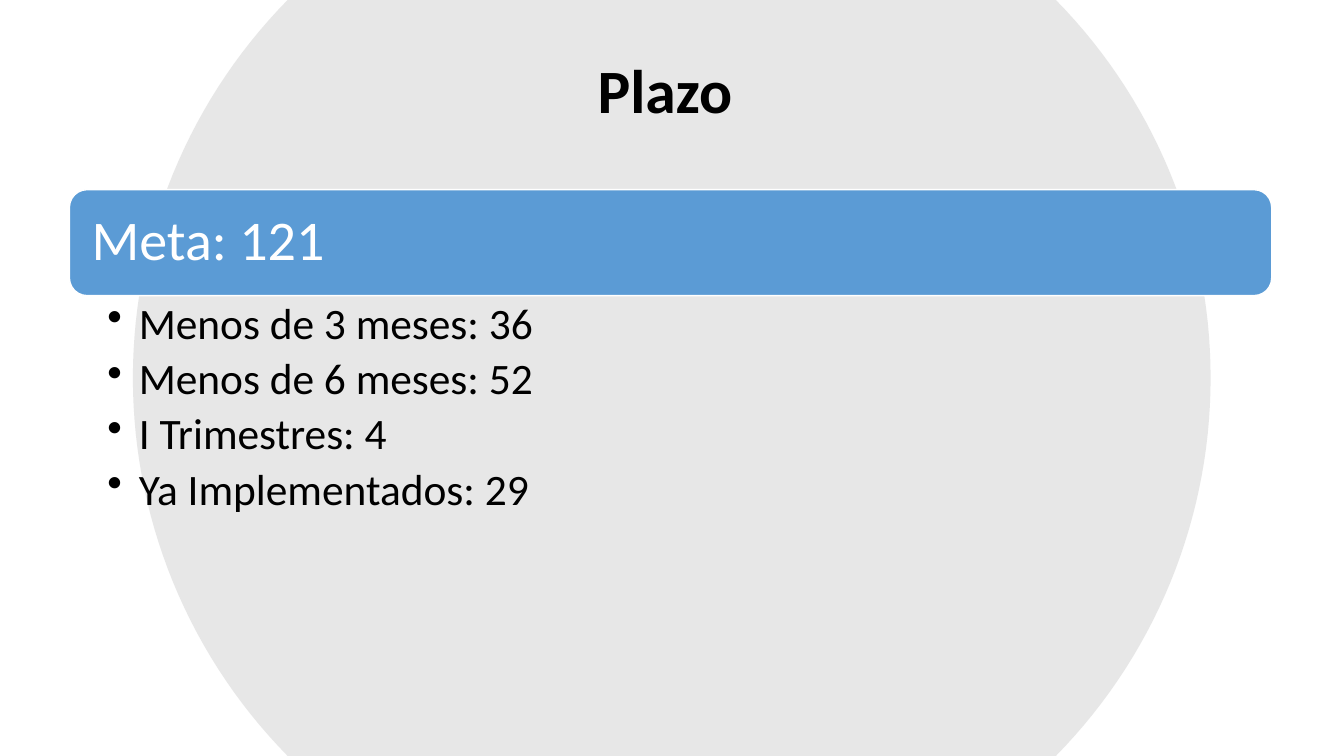
import dataclasses
import math

import pptx
import pptx.dml.color
import pptx.enum.shapes
import pptx.enum.text
import pptx.oxml
import pptx.oxml.ns
import pptx.util

Cm = pptx.util.Cm
Pt = pptx.util.Pt
Color = pptx.dml.color.RGBColor.from_string
Align = pptx.enum.text.PP_ALIGN
Anchor = pptx.enum.text.MSO_ANCHOR


@dataclasses.dataclass(frozen=True)
class Theme:
    font: str = "Calibri"
    ink: str = "000000"
    white: str = "FFFFFF"
    circle: str = "D9D9D9"
    bar: str = "5B9BD5"
    title_size: int = 44
    goal_size: int = 40
    item_size: int = 31


theme = Theme()


def write(shape, lines, size, color=theme.ink, bold=False, align=Align.LEFT,
          anchor=Anchor.TOP, insets=(0.25, 0.13, 0.25, 0.13), after=0, bullet_indent=0):
    """Fill a shape with paragraphs; insets run left, top, right, bottom in cm."""
    frame = shape.text_frame
    frame.word_wrap = True
    frame.vertical_anchor = anchor
    (frame.margin_left, frame.margin_top,
     frame.margin_right, frame.margin_bottom) = map(Cm, insets)
    for index, line in enumerate(lines):
        para = frame.add_paragraph() if index else frame.paragraphs[0]
        para.alignment = align
        para.line_spacing = 0.9
        para.space_after = Pt(after)
        if bullet_indent:
            properties = para._p.get_or_add_pPr()
            properties.set("marL", str(Cm(bullet_indent)))
            properties.set("indent", str(-Cm(bullet_indent)))
            properties.append(pptx.oxml.parse_xml(
                f'<a:buChar {pptx.oxml.ns.nsdecls("a")} char="•"/>'))
        span = para.add_run()
        span.text = line
        span.font.name = theme.font
        span.font.size = Pt(size)
        span.font.bold = bold
        span.font.color.rgb = Color(color)


deck = pptx.Presentation()
deck.slide_width, deck.slide_height = Cm(33.87), Cm(19.05)
page = deck.slides.add_slide(deck.slide_layouts[6])

# Background circle, cut off at the top and bottom of the page
center_x, center_y, radius = 16.93, 9.525, 13.58
steps = 60
half_angle = math.asin(center_y / radius)
points = []
for middle in (0, math.pi):
    for step in range(steps + 1):
        angle = middle + half_angle * (2 * step / steps - 1)
        points.append((Cm(center_x + radius * math.cos(angle)),
                       Cm(center_y + radius * math.sin(angle))))
builder = page.shapes.build_freeform(*points[0])
builder.add_line_segments(points[1:], close=True)
circle = builder.convert_to_shape()
circle.shadow.inherit = False
circle.fill.solid()
circle.fill.fore_color.rgb = Color(theme.circle)
circle.line.fill.background()
fill_color = circle._element.spPr.find(".//" + pptx.oxml.ns.qn("a:srgbClr"))
fill_color.append(pptx.oxml.parse_xml(
    f'<a:alpha {pptx.oxml.ns.nsdecls("a")} val="62000"/>'))

# Title
title = page.shapes.add_textbox(Cm(2.33), Cm(1.01), Cm(29.21), Cm(2.7))
write(title, ["Plazo "], theme.title_size, bold=True,
      align=Align.CENTER, anchor=Anchor.MIDDLE)

# Goal bar
left, top, width, height = Cm(1.75), Cm(4.78), Cm(30.3), Cm(2.67)
bar = page.shapes.add_shape(
    pptx.enum.shapes.MSO_SHAPE.ROUNDED_RECTANGLE, left, top, width, height)
bar.shadow.inherit = False
bar.fill.solid()
bar.fill.fore_color.rgb = Color(theme.bar)
bar.line.color.rgb = Color(theme.white)
bar.line.width = Pt(1)
write(bar, ["Meta: 121"], theme.goal_size, color=theme.white,
      anchor=Anchor.MIDDLE, insets=(0.43, 0.43, 0.43, 0.43))

# Deadlines
deadlines = page.shapes.add_textbox(left, top + height, width, Cm(5.97))
write(deadlines,
      ["Menos de 3 meses: 36", "Menos de 6 meses: 52",
       "I Trimestres: 4", "Ya Implementados: 29"],
      theme.item_size, insets=(0.96, 0.15, 0.79, 0.15), after=6, bullet_indent=0.79)

deck.save("out.pptx")
